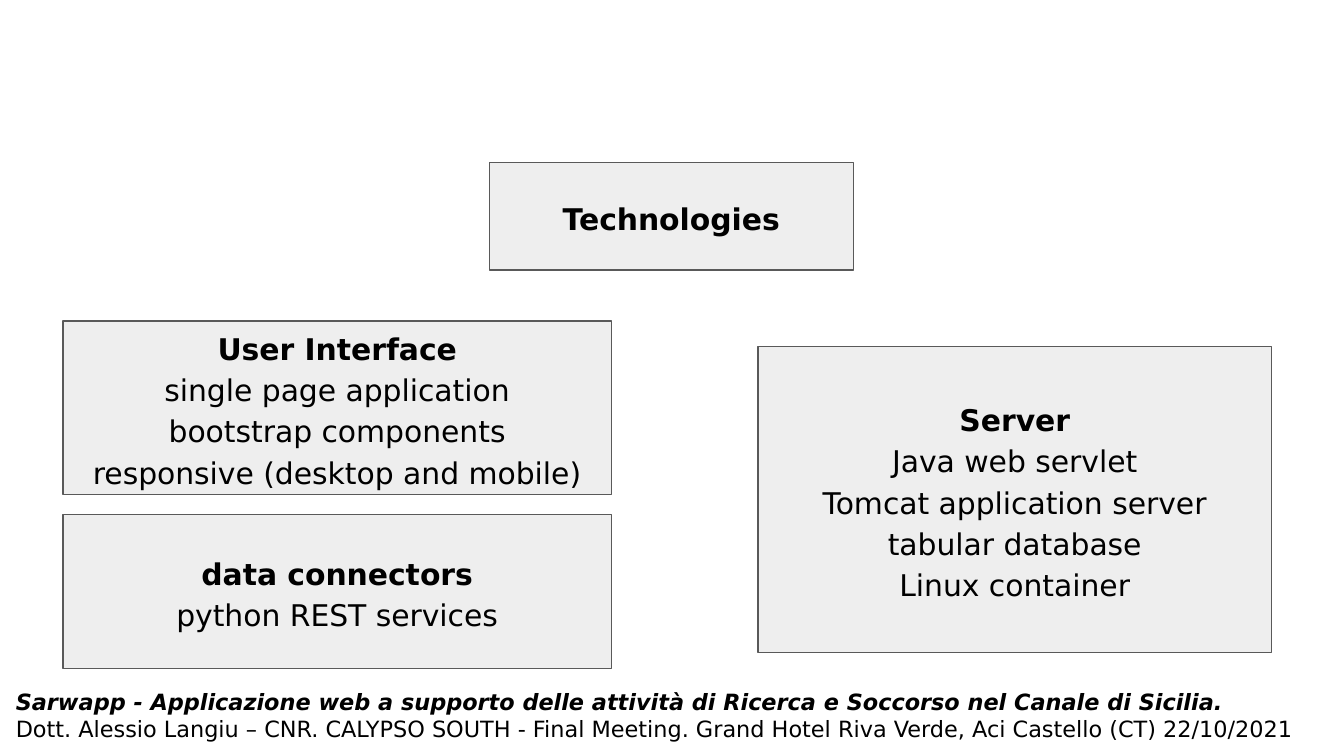
"""Build the technologies slide of the web application talk."""
from pptx import Presentation, util as u
from pptx.dml.color import RGBColor
from pptx.enum import shapes, text

BLACK = RGBColor(0x00, 0x00, 0x00)
LIGHT_GREY = RGBColor(0xEE, 0xEE, 0xEE)
DARK_GREY = RGBColor(0x59, 0x59, 0x59)

FONT = "DejaVu Sans"
INSET = u.Pt(7.2)
LEFT_COLUMN, LEFT_WIDTH = 33.8, 293.8

BOXES = [
    ((262.1, 87.1, 195.1, 57.6), ["Technologies"]),
    ((406.1, 185.7, 275.2, 163.9), [
        "Server",
        "Java web servlet",
        "Tomcat application server",
        "tabular database",
        "Linux container",
    ]),
    ((LEFT_COLUMN, 171.9, LEFT_WIDTH, 93), [
        "User Interface",
        "single page application",
        "bootstrap components",
        "responsive (desktop and mobile)",
    ]),
    ((LEFT_COLUMN, 275.7, LEFT_WIDTH, 82.6), [
        "data connectors",
        "python REST services",
    ]),
]
FOOTER = [
    "Sarwapp - Applicazione web a supporto delle attività di Ricerca e Soccorso nel Canale di Sicilia.",
    "Dott. Alessio Langiu – CNR. CALYPSO SOUTH - Final Meeting. "
    "Grand Hotel Riva Verde, Aci Castello (CT) 22/10/2021",
]


def set_attributes(target, values):
    """Set each named attribute of the target."""
    for name, value in values.items():
        setattr(target, name, value)


def write_lines(frame, lines, size, heading_format, paragraph_format):
    """Write one paragraph per line, the first one as a heading."""
    set_attributes(frame, {
        "word_wrap": True,
        "margin_left": INSET,
        "margin_top": INSET,
        "margin_right": INSET,
        "margin_bottom": INSET,
    })
    for index, line in enumerate(lines):
        paragraph = frame.add_paragraph() if index else frame.paragraphs[0]
        set_attributes(paragraph, paragraph_format)
        run = paragraph.add_run()
        run.text = line
        run.font.color.rgb = BLACK
        set_attributes(run.font, {"name": FONT, "size": u.Pt(size), "bold": False})
        if index == 0:
            set_attributes(run.font, heading_format)


def add_box(slide, bounds, lines):
    """Add a grey box with a bold heading and centred lines."""
    shape = slide.shapes.add_shape(shapes.MSO_SHAPE.RECTANGLE, *map(u.Pt, bounds))
    shape.shadow.inherit = False
    shape.fill.solid()
    shape.fill.fore_color.rgb = LIGHT_GREY
    shape.line.color.rgb = DARK_GREY
    shape.line.width = u.Pt(0.75)
    shape.text_frame.vertical_anchor = text.MSO_ANCHOR.MIDDLE
    write_lines(shape.text_frame, lines, 16, {"bold": True},
                {"alignment": text.PP_ALIGN.CENTER, "line_spacing": 1.15})


def add_footer(slide, bounds, lines):
    """Add the talk title and the event line."""
    shape = slide.shapes.add_textbox(*map(u.Pt, bounds))
    write_lines(shape.text_frame, lines, 12, {"bold": True, "italic": True},
                {"alignment": text.PP_ALIGN.LEFT})


def main():
    """Build and save the presentation."""
    presentation = Presentation()
    set_attributes(presentation, {"slide_width": u.Pt(720), "slide_height": u.Pt(405)})
    slide = presentation.slides.add_slide(presentation.slide_layouts[6])
    add_footer(slide, (1.4, 361.4, 720, 43.9), FOOTER)
    for bounds, lines in BOXES:
        add_box(slide, bounds, lines)
    presentation.save("out.pptx")


if __name__ == "__main__":
    main()
